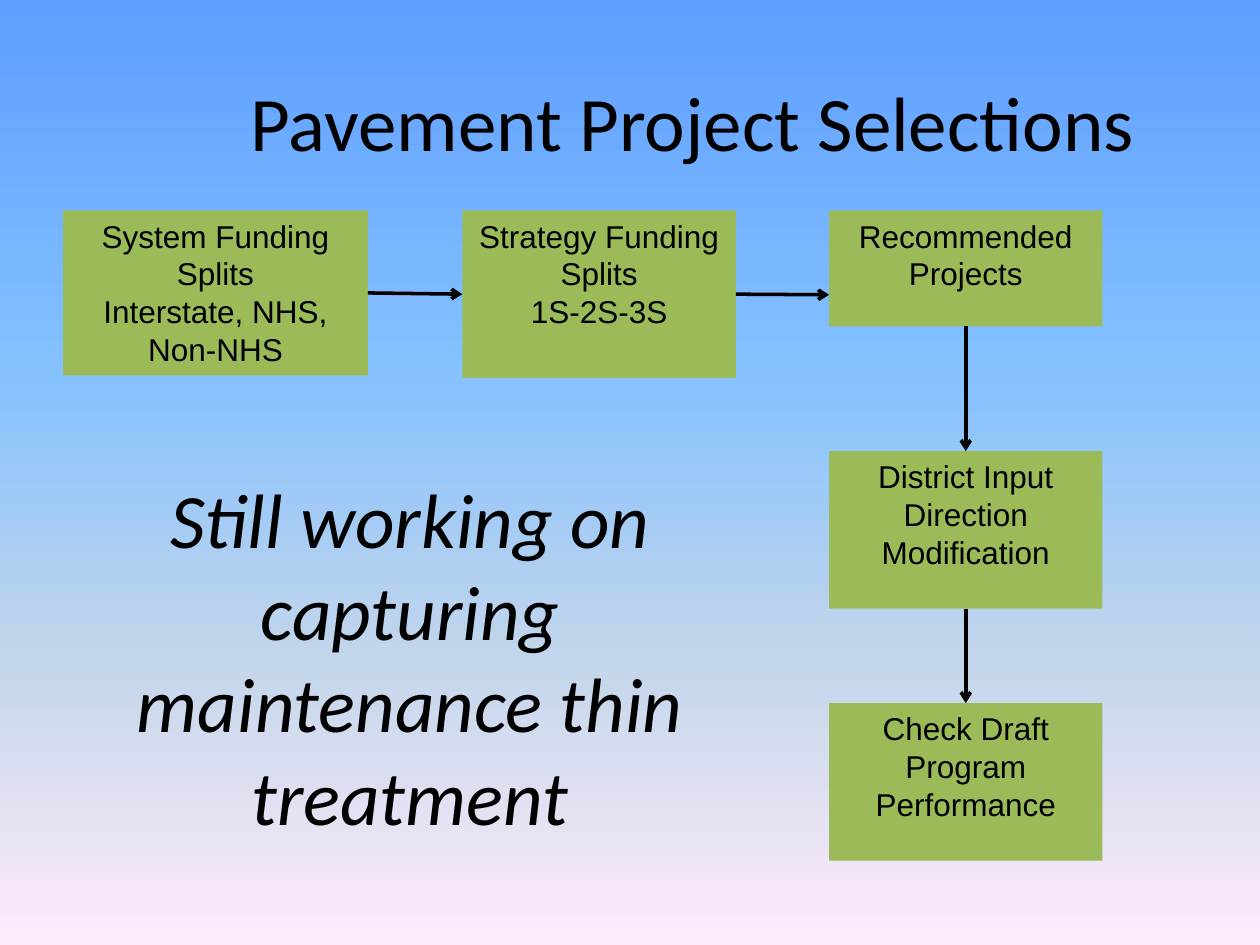
from lxml import etree
from pptx import Presentation
from pptx.dml.color import RGBColor
from pptx.enum.shapes import MSO_CONNECTOR, MSO_SHAPE
from pptx.enum.text import MSO_ANCHOR, PP_ALIGN
from pptx.oxml.ns import qn
from pptx.util import Inches, Pt

RECTANGLE = MSO_SHAPE.RECTANGLE
STRAIGHT = MSO_CONNECTOR.STRAIGHT
CENTER = PP_ALIGN.CENTER
TOP, MIDDLE = MSO_ANCHOR.TOP, MSO_ANCHOR.MIDDLE

BLACK = "000000"
GREEN = "9BBB59"
SKY = [(0, "5E9EFF"), (40, "85C2FF"), (70, "C4D6EB"), (100, "FFEBFA")]

BOTTOM_SIDE, LEFT_SIDE, RIGHT_SIDE, TOP_SIDE = 2, 1, 3, 0
ROW_TOP = 1.67
COLUMN_LEFT = 6.58
STEP_WIDTH = 2.17


def color(hex_value):
    return RGBColor.from_string(hex_value)


def set_background(page, stops):
    """Fill the page with a top-to-bottom gradient of (percent, colour) stops."""
    fill = page.background.fill
    fill.gradient()
    fill.gradient_angle = 270
    stop_list = next(page.background._cSld.iter(qn("a:gsLst")))
    for stop in list(stop_list):
        stop_list.remove(stop)
    for percent, hex_value in stops:
        stop = etree.SubElement(stop_list, qn("a:gs"), pos=str(percent * 1000))
        etree.SubElement(stop, qn("a:srgbClr"), val=hex_value)


def write_text(shape, text, size=18, font="Arial", italic=False, anchor=TOP):
    """Write one centred paragraph for each line of the text."""
    frame = shape.text_frame
    frame.word_wrap = True
    frame.vertical_anchor = anchor
    for index, line in enumerate(text.split("\n")):
        para = frame.add_paragraph() if index else frame.paragraphs[0]
        para.alignment = CENTER
        span = para.add_run()
        span.text = line
        span.font.size = Pt(size)
        span.font.name = font
        span.font.italic = italic
        span.font.color.rgb = color(BLACK)


def add_heading(page, text, left, top, width, height, italic=False):
    box = page.shapes.add_textbox(*map(Inches, (left, top, width, height)))
    write_text(box, text, size=44, font="Calibri", italic=italic, anchor=MIDDLE)


def add_step(page, text, left, top, width, height):
    box = page.shapes.add_shape(RECTANGLE, *map(Inches, (left, top, width, height)))
    box.shadow.inherit = False
    box.fill.solid()
    box.fill.fore_color.rgb = color(GREEN)
    box.line.fill.background()
    write_text(box, text)
    return box


def add_arrow(page, source, source_side, end=(0, 0), target=None, target_side=None):
    """Draw an arrow from a step to another step, or to a point in inches."""
    end_x, end_y = map(Inches, end)
    arrow = page.shapes.add_connector(STRAIGHT, 0, 0, end_x, end_y)
    arrow.begin_connect(source, source_side)
    if target is not None:
        arrow.end_connect(target, target_side)
    arrow.line.color.rgb = color(BLACK)
    arrow.line.width = Pt(2)
    etree.SubElement(arrow.line._get_or_add_ln(), qn("a:tailEnd"), type="arrow")
    etree.SubElement(arrow._element.spPr, qn("a:effectLst"))


def main():
    deck = Presentation()
    deck.slide_width, deck.slide_height = Inches(10), Inches(7.5)
    page = deck.slides.add_slide(deck.slide_layouts[6])
    set_background(page, SKY)

    add_heading(page, "Pavement Project Selections", 1, 0.33, 9, 1.25)

    system = add_step(page, "System Funding\nSplits\nInterstate, NHS, Non-NHS",
                      0.5, ROW_TOP, 2.42, 1.31)
    strategy = add_step(page, "Strategy Funding Splits\n1S-2S-3S",
                        3.67, ROW_TOP, STEP_WIDTH, 1.33)
    projects = add_step(page, "Recommended Projects",
                        COLUMN_LEFT, ROW_TOP, STEP_WIDTH, 0.92)
    district = add_step(page, "District Input Direction Modification",
                        COLUMN_LEFT, 3.58, STEP_WIDTH, 1.25)
    check = add_step(page, "Check Draft Program Performance",
                     COLUMN_LEFT, 5.58, STEP_WIDTH, 1.25)

    add_arrow(page, system, RIGHT_SIDE, target=strategy, target_side=LEFT_SIDE)
    add_arrow(page, strategy, RIGHT_SIDE, end=(COLUMN_LEFT, 2.34))
    for source, target in ((projects, district), (district, check)):
        add_arrow(page, source, BOTTOM_SIDE, target=target, target_side=TOP_SIDE)

    add_heading(page, "Still working on capturing maintenance thin treatment",
                0.67, 4.58, 5.17, 1.25, italic=True)
    deck.save("out.pptx")


if __name__ == "__main__":
    main()
